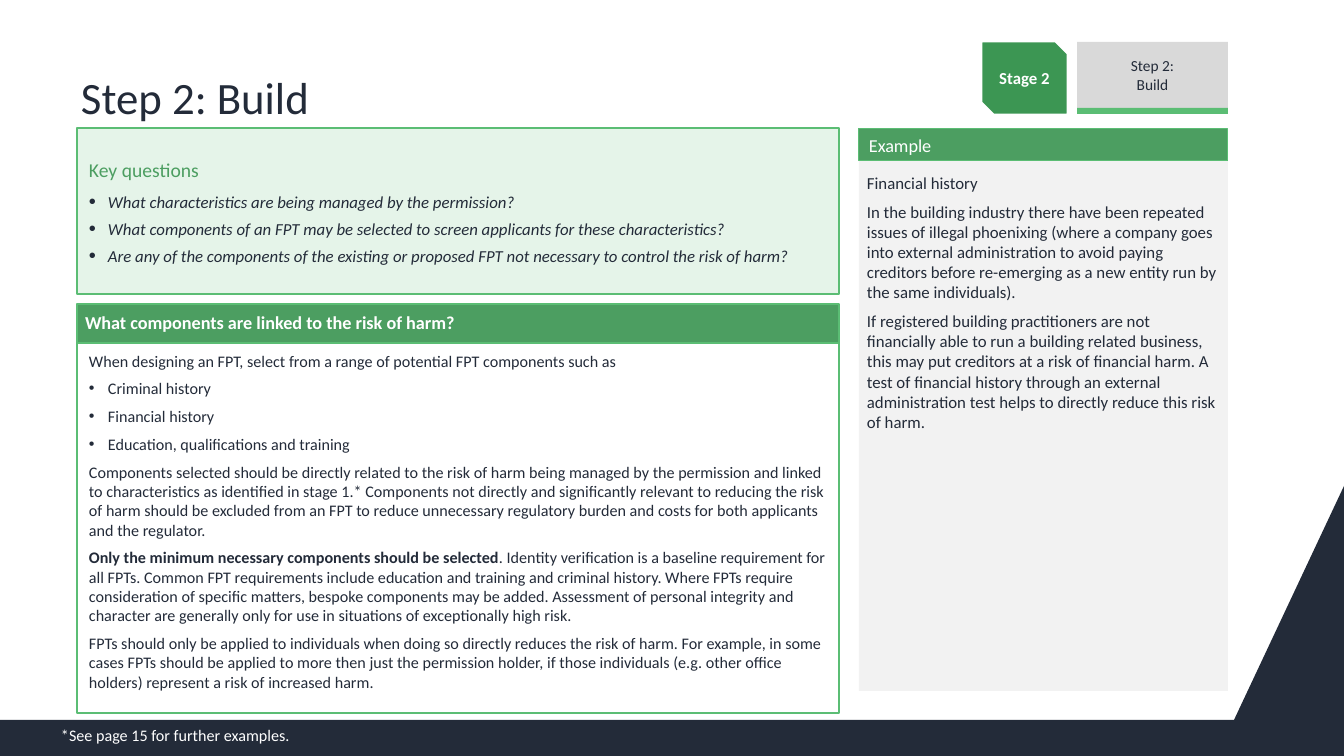
from dataclasses import dataclass

from lxml.etree import SubElement
from pptx import Presentation
from pptx.dml.color import RGBColor
from pptx.enum.shapes import MSO_SHAPE as Shape
from pptx.enum.text import MSO_ANCHOR as Anchor, PP_ALIGN as Align
from pptx.oxml.ns import qn
from pptx.util import Emu, Pt

EMU_PER_PX = 12192000 / 1344


@dataclass(frozen=True)
class Theme:
    font: str = "Calibri"
    navy: str = "232B39"
    white: str = "FFFFFF"
    green: str = "4C9E61"
    deep_green: str = "3C9653"
    bright_green: str = "5BBD74"
    pale_green: str = "E5F4E9"
    grey: str = "D9D9D9"
    pale_grey: str = "F2F2F2"
    title: float = 32
    key_heading: float = 14
    heading: float = 13
    body: float = 12
    detail: float = 11.5
    label: float = 11


THEME = Theme()


@dataclass(frozen=True)
class Line:
    text: str
    size: float
    color: str = THEME.navy
    bold: bool = False
    italic: bool = False
    lead: str = ""
    bullet: int = 0
    before: float = 0
    after: float = 0
    spacing: float = 1.0
    align: Align = Align.LEFT


def px(value):
    return Emu(round(value * EMU_PER_PX))


def rgb(color):
    return RGBColor.from_string(color)


def add_bullet(paragraph, percent):
    properties = paragraph._p.get_or_add_pPr()
    properties.set("marL", str(px(19)))
    properties.set("indent", str(-px(19)))
    SubElement(properties, qn("a:buSzPct"), val=str(percent * 1000))
    SubElement(properties, qn("a:buFont"), typeface="Arial")
    SubElement(properties, qn("a:buChar"), char="•")


def write_line(paragraph, line):
    paragraph.text = line.lead or line.text
    if line.lead:
        paragraph.add_run().text = line.text
    paragraph.alignment = line.align
    paragraph.line_spacing = line.spacing
    paragraph.space_before = Pt(line.before)
    paragraph.space_after = Pt(line.after)
    if line.bullet:
        add_bullet(paragraph, line.bullet)
    for index, run in enumerate(paragraph.runs):
        font = run.font
        font.name = THEME.font
        font.size = Pt(line.size)
        font.color.rgb = rgb(line.color)
        font.bold = line.bold or bool(line.lead and index == 0)
        font.italic = line.italic


def write_lines(shape, lines, anchor, insets):
    frame = shape.text_frame
    frame.word_wrap = True
    frame.vertical_anchor = anchor
    frame.margin_left = frame.margin_right = px(insets[0])
    frame.margin_top = frame.margin_bottom = px(insets[1])
    frame.text = "\n".join(line.text for line in lines)
    for paragraph, line in zip(frame.paragraphs, lines):
        write_line(paragraph, line)


def paint(shape, fill, outline=None, width=1):
    shape.shadow.inherit = False
    shape.fill.solid()
    shape.fill.fore_color.rgb = rgb(fill)
    if outline:
        shape.line.color.rgb = rgb(outline)
        shape.line.width = Pt(width)
    else:
        shape.line.fill.background()


def add_text(slide, box, line, anchor, insets):
    shape = slide.shapes.add_textbox(*map(px, box))
    write_lines(shape, [line], anchor, insets)


def add_panel(slide, box, fill, lines=(), outline=None, width=1,
              anchor=Anchor.MIDDLE, insets=(10, 5), preset=Shape.RECTANGLE):
    shape = slide.shapes.add_shape(preset, *map(px, box))
    paint(shape, fill, outline, width)
    if lines:
        write_lines(shape, lines, anchor, insets)


def add_footer_band(slide):
    builder = slide.shapes.build_freeform(1234, 720, scale=EMU_PER_PX)
    builder.add_line_segments(
        [(0, 720), (0, 756), (1344, 756), (1344, 486)], close=True)
    paint(builder.convert_to_shape(), THEME.navy)


def add_stage_markers(slide):
    add_panel(slide, (981, 41, 87, 74), THEME.deep_green,
              [Line("Stage 2", THEME.body, THEME.white, bold=True, align=Align.CENTER)],
              THEME.white, 2, preset=Shape.SNIP_2_DIAG_RECTANGLE)
    add_panel(slide, (1077, 42, 151, 66), THEME.grey,
              [Line("Step 2:\vBuild", THEME.label, align=Align.CENTER)])
    add_panel(slide, (1077, 108, 151, 6), THEME.bright_green)


def add_key_questions(slide):
    questions = [
        "What characteristics are being managed by the permission?",
        "What components of an FPT may be selected to screen applicants for these characteristics?",
        "Are any of the components of the existing or proposed FPT not necessary to control the risk of harm?",
    ]
    lines = [Line("Key questions", THEME.key_heading, THEME.green, after=6, spacing=1.07)]
    lines += [Line(question, THEME.body, italic=True, bullet=120, after=4, spacing=1.07)
              for question in questions]
    add_panel(slide, (77, 128, 762, 166), THEME.pale_green, lines,
              THEME.bright_green, insets=(12, 8))


def add_components(slide):
    add_panel(slide, (77, 304, 762, 39), THEME.green,
              [Line("What components are linked to the risk of harm?", THEME.heading,
                    THEME.white, bold=True, spacing=0.9)],
              THEME.bright_green, insets=(8, 4))
    size = THEME.detail
    components = ["Criminal history", "Financial history", "Education, qualifications and training"]
    lines = [
        Line("When designing an FPT, select from a range of potential FPT components such as",
             size, after=6),
        *[Line(component, size, bullet=100, after=6) for component in components],
        Line("Components selected should be directly related to the risk of harm being managed "
             "by the permission and linked to characteristics as identified in stage 1.* "
             "Components not directly and significantly relevant to reducing the risk of harm "
             "should be excluded from an FPT to reduce unnecessary regulatory burden and costs "
             "for both applicants and the regulator.", size, after=6),
        Line(". Identity verification is a baseline requirement for all FPTs. Common FPT "
             "requirements include education and training and criminal history. Where FPTs "
             "require consideration of specific matters, bespoke components may be added. "
             "Assessment of personal integrity and character are generally only for use in "
             "situations of exceptionally high risk.", size, after=6,
             lead="Only the minimum necessary components should be selected"),
        Line("FPTs should only be applied to individuals when doing so directly reduces the risk "
             "of harm. For example, in some cases FPTs should be applied to more then just the "
             "permission holder, if those individuals (e.g. other office holders) represent a "
             "risk of increased harm.", size, after=6),
    ]
    add_panel(slide, (77, 343, 762, 370), THEME.white, lines, THEME.bright_green,
              anchor=Anchor.TOP, insets=(12, 8))


def add_example(slide):
    add_panel(slide, (859, 129, 369, 32), THEME.green,
              [Line("Example", THEME.heading, THEME.white)], THEME.bright_green, 0.75)
    lines = [
        Line("Financial history", THEME.body),
        Line("In the building industry there have been repeated issues of illegal phoenixing "
             "(where a company goes into external administration to avoid paying creditors "
             "before re-emerging as a new entity run by the same individuals).",
             THEME.body, before=6),
        Line("If registered building practitioners are not financially able to run a building "
             "related business, this may put creditors at a risk of financial harm. A test of "
             "financial history through an external administration test helps to directly "
             "reduce this risk of harm.", THEME.body, before=6),
    ]
    add_panel(slide, (859, 161, 369, 530), THEME.pale_grey, lines,
              anchor=Anchor.TOP, insets=(8, 12))


def main():
    presentation = Presentation()
    presentation.slide_width = px(1344)
    presentation.slide_height = px(756)
    slide = presentation.slides.add_slide(presentation.slide_layouts[6])
    add_footer_band(slide)
    add_text(slide, (77, 15, 1152, 114), Line("Step 2: Build", THEME.title, spacing=0.9),
             Anchor.BOTTOM, (4, 5))
    add_example(slide)
    add_components(slide)
    add_text(slide, (51, 720, 530, 29),
             Line("*See page 15 for further examples.", THEME.detail, THEME.white),
             Anchor.TOP, (10, 5))
    add_stage_markers(slide)
    add_key_questions(slide)
    presentation.save("out.pptx")


if __name__ == "__main__":
    main()
